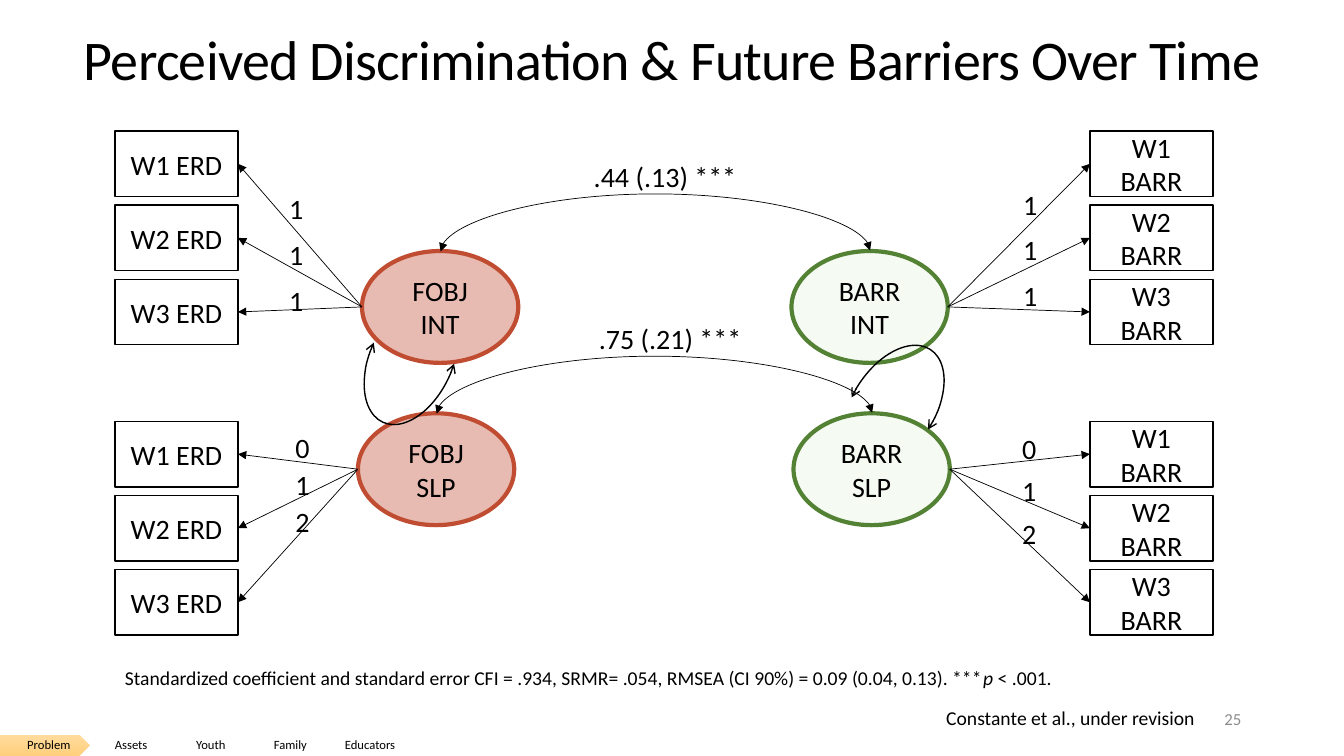
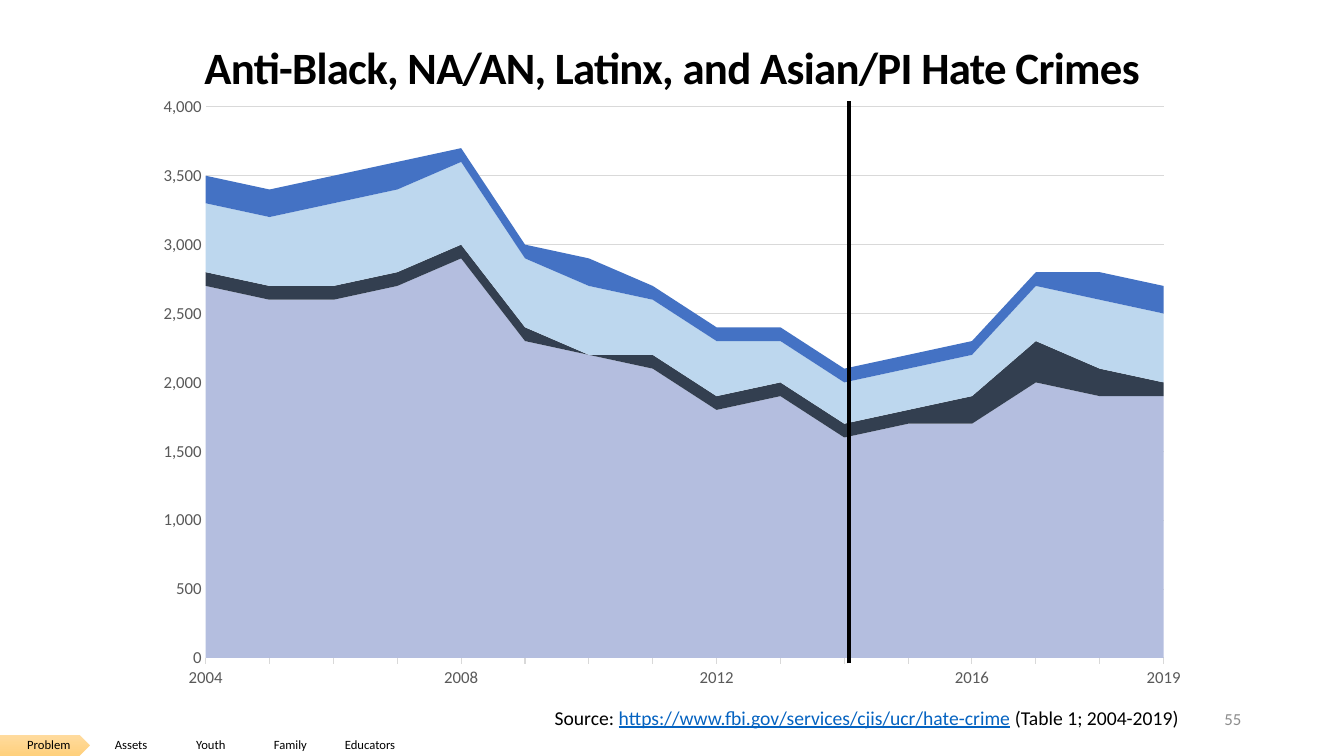
from dataclasses import dataclass

from lxml.etree import SubElement
from pptx import Presentation
from pptx.chart.data import CategoryChartData
from pptx.dml.color import RGBColor
from pptx.enum.chart import XL_CHART_TYPE as ChartType, XL_TICK_MARK as TickMark
from pptx.enum.shapes import MSO_CONNECTOR as Connector, MSO_SHAPE as Shape
from pptx.enum.text import MSO_ANCHOR as Anchor, PP_ALIGN as Align
from pptx.oxml.ns import qn
from pptx.util import Inches, Pt


@dataclass(frozen=True)
class Theme:
    font: str = "Calibri"
    black: str = "000000"
    white: str = "FFFFFF"
    page_grey: str = "8C8C8C"
    axis_grey: str = "595959"
    grid_grey: str = "D9D9D9"
    link: str = "0563C1"
    tab_top: str = "FFDB9E"
    tab_bottom: str = "FFD07C"
    diagram_size: int = 20
    note_size: int = 14
    axis_size: int = 12
    page_size: int = 12
    tab_size: int = 9


THEME = Theme()

# Content: shared navigation
SECTIONS = ["Problem", "Assets", "Youth", "Family", "Educators"]
TAB_WIDTH, TAB_STEP, TAB_HEIGHT, TAB_TOP = 0.99, 0.79, 0.21, 7.29

# Content: path diagram
DIAGRAM_TITLE = "Perceived Discrimination & Future Barriers Over Time"
FIT_NOTE = [
    ("Standardized coefficient and standard error CFI = .934, SRMR= .054, "
     "RMSEA (CI 90%) = 0.09 (0.04, 0.13). ***", {}),
    ("p ", {"italic": True}),
    ("< .001.", {}),
]
CITATION = [("Constante et al., under revision", {})]
BOX_WIDTH, BOX_HEIGHT, BOX_STEP = 1.22, 0.65, 0.735
OVAL_WIDTH, OVAL_HEIGHT = 1.55, 1.11
SCALES = {  # box left, fill, fill opacity in percent, outline
    "ERD": (1.14, "C04D32", 38, "C04D32"),
    "BARR": (10.81, "E2F0D9", 33, "548235"),
}
FACTORS = [  # scale, oval lines, oval position, first box top, loadings, label left, top, step
    ("ERD", ["FOBJ", "INT"], (3.59, 2.49), 1.3, "111", 2.77, 1.85, 0.455),
    ("ERD", ["FOBJ", "SLP"], (3.55, 4.1), 4.18, "012", 2.83, 4.22, 0.37),
    ("BARR", ["BARR", "INT"], (7.85, 2.49), 1.3, "111", 10.05, 1.81, 0.45),
    ("BARR", ["BARR", "SLP"], (7.87, 4.1), 4.18, "012", 10.04, 4.23, 0.42),
]
CORRELATIONS = [  # text, text position, curve left, right, foot, rise
    (".44 (.13) ***", (5.79, 1.53), 4.37, 8.63, 2.49, 0.58),
    (".75 (.21) ***", (5.84, 3.14), 4.33, 8.65, 4.1, 0.58),
]
ARCS = [((8.45, 3.36), 32.6), ((3.67, 2.89), 204.6)]  # position, rotation

# Content: hate crime chart
CHART_TITLE = "Anti-Black, NA/AN, Latinx, and Asian/PI Hate Crimes"
SOURCE = [
    ("Source: ", {}),
    ("https://www.fbi.gov/services/cjis/ucr/hate-crime", {"underline": True, "color": THEME.link}),
    (" (Table 1; 2004-2019)", {}),
]
LABELLED_YEARS = {2004, 2008, 2012, 2016, 2019}
SERIES = [
    ("Series 1", "B4BEDF", [2700, 2600, 2600, 2700, 2900, 2300, 2200, 2100,
                            1800, 1900, 1600, 1700, 1700, 2000, 1900, 1900]),
    ("Series 2", "333F50", [100, 100, 100, 100, 100, 100, 0, 100,
                            100, 100, 100, 100, 200, 300, 200, 100]),
    ("Series 3", "BDD7EE", [500, 500, 600, 600, 600, 500, 500, 400,
                            400, 300, 300, 300, 300, 400, 500, 500]),
    ("Series 4", "4472C4", [200, 200, 200, 200, 100, 100, 200, 100,
                            100, 100, 100, 100, 100, 100, 200, 200]),
]
PLOT_LAYOUT = {"x": 0.06, "y": 0.036, "w": 0.904, "h": 0.895}


def rgb(value):
    return RGBColor.from_string(value)


def style_font(font, size, color=THEME.black):
    font.name, font.size = THEME.font, Pt(size)
    font.color.rgb = rgb(color)


def style_line(line, color, width):
    line.color.rgb = rgb(color)
    line.width = Pt(width)


def write_lines(shape, lines, size, align=Align.CENTER):
    frame = shape.text_frame
    frame.word_wrap = True
    frame.vertical_anchor = Anchor.MIDDLE
    frame.text = "\n".join(lines)
    for paragraph in frame.paragraphs:
        paragraph.alignment = align
        style_font(paragraph.font, size)


def add_text(slide, box, runs, size, align=Align.LEFT, color=THEME.black, anchor=Anchor.TOP):
    frame = slide.shapes.add_textbox(*map(Inches, box)).text_frame
    frame.word_wrap = True
    frame.vertical_anchor = anchor
    paragraph = frame.paragraphs[0]
    paragraph.alignment = align
    style_font(paragraph.font, size, color)
    for text, style in runs:
        run = paragraph.add_run()
        run.text = text
        run.font.italic = style.get("italic")
        run.font.underline = style.get("underline")
        if "color" in style:
            run.font.color.rgb = rgb(style["color"])


def add_preset(slide, preset, box, fill=None):
    shape = slide.shapes.add_shape(preset, *map(Inches, box))
    shape.shadow.inherit = False
    shape.line.fill.background()
    if fill:
        shape.fill.solid()
        shape.fill.fore_color.rgb = rgb(fill)
    else:
        shape.fill.background()
    return shape


def add_line(slide, kind, start, end, width):
    connector = slide.shapes.add_connector(kind, *map(Inches, (*start, *end)))
    style_line(connector.line, THEME.black, width)
    SubElement(connector.element.spPr, qn("a:effectLst"))
    return connector


def add_arrowheads(shape, kind, ends):
    outline = shape.element.spPr.find(qn("a:ln"))
    for end in ends:
        SubElement(outline, qn(f"a:{end}"), type=kind)


def add_base(presentation, title, top, size, bold, page, source, source_right):
    slide = presentation.slides.add_slide(presentation.slide_layouts[5])
    # Title
    placeholder = slide.shapes.title
    placeholder.left, placeholder.top = Inches(0), Inches(top)
    placeholder.width, placeholder.height = Inches(13.33), Inches(0.71)
    write_lines(placeholder, [title], size)
    placeholder.text_frame.vertical_anchor = Anchor.TOP
    paragraph = placeholder.text_frame.paragraphs[0]
    paragraph.font.bold = bold
    paragraph.line_spacing = 0.85 if bold else 1.0
    paragraph.runs[0].font.bold = bold
    paragraph.runs[0].font._element.set("spc", "-50")
    # Source and page number
    add_text(slide, (source_right - 8.23, 6.95, 8.23, 0.34), source, THEME.note_size, Align.RIGHT)
    add_text(slide, (11.63, 6.95, 0.78, 0.36), [(page, {})], THEME.page_size,
             Align.RIGHT, THEME.page_grey, Anchor.MIDDLE)
    return slide


def add_navigation(slide):
    for index, name in enumerate(SECTIONS):
        preset = Shape.CHEVRON if index else Shape.PENTAGON
        box = (index * TAB_STEP, TAB_TOP, TAB_WIDTH, TAB_HEIGHT)
        tab = add_preset(slide, preset, box, THEME.white)
        if index == 0:
            tab.fill.gradient()
            tab.fill.gradient_angle = 270
            for stop, color in zip(tab.fill.gradient_stops, (THEME.tab_top, THEME.tab_bottom)):
                stop.color.rgb = rgb(color)
        write_lines(tab, [name], THEME.tab_size)
        frame = tab.text_frame
        frame.margin_left, frame.margin_right = Inches(0.04), Inches(0.01)
        frame.margin_top = frame.margin_bottom = Inches(0.03)
        frame.paragraphs[0].line_spacing = 0.9


def add_factor(slide, scale, lines, position, first_top, loadings, label_left, label_top, label_step):
    box_left, fill, opacity, outline = SCALES[scale]
    oval_left, oval_top = position
    oval = add_preset(slide, Shape.OVAL, (*position, OVAL_WIDTH, OVAL_HEIGHT), fill)
    color = oval.element.spPr.find(qn("a:solidFill"))[0]
    SubElement(color, qn("a:alpha"), val=str(opacity * 1000))
    style_line(oval.line, outline, 3)
    write_lines(oval, lines, THEME.diagram_size)

    boxes_on_left = box_left < oval_left
    start = (oval_left + (0 if boxes_on_left else OVAL_WIDTH), oval_top + OVAL_HEIGHT / 2)
    tip_left = box_left + (BOX_WIDTH if boxes_on_left else 0)
    for row, loading in enumerate(loadings):
        top = first_top + row * BOX_STEP
        box = add_preset(slide, Shape.RECTANGLE, (box_left, top, BOX_WIDTH, BOX_HEIGHT), THEME.white)
        style_line(box.line, THEME.black, 1)
        write_lines(box, [f"W{row + 1} {scale}"], THEME.diagram_size)
        arrow = add_line(slide, Connector.STRAIGHT, start, (tip_left, top + BOX_HEIGHT / 2), 0.5)
        add_arrowheads(arrow, "triangle", ["tailEnd"])
        add_text(slide, (label_left, label_top + row * label_step, 0.29, 0.45),
                 [(loading, {})], THEME.diagram_size)


def add_correlation(slide, text, position, left, right, foot, rise):
    add_text(slide, (*position, 1.85, 0.44), [(text, {})], THEME.diagram_size)
    # A thin upright curve, turned a quarter so that it arches over the ovals
    thickness, span, middle = 0.01, right - left, (left + right) / 2
    curve = add_line(slide, Connector.CURVE, (middle - thickness / 2, foot - span / 2),
                     (middle + thickness / 2, foot + span / 2), 0.5)
    properties = curve.element.spPr
    for name, value in (("rot", "5400000"), ("flipH", "1"), ("flipV", "1")):
        properties.find(qn("a:xfrm")).set(name, value)
    guides = properties.find(qn("a:prstGeom")).find(qn("a:avLst"))
    SubElement(guides, qn("a:gd"), name="adj1", fmla=f"val {round(rise / thickness * 100000)}")
    add_arrowheads(curve, "triangle", ["headEnd", "tailEnd"])


def build_diagram(presentation):
    slide = add_base(presentation, DIAGRAM_TITLE, 0.19, 40, False, "25", CITATION, 11.95)
    add_text(slide, (1.14, 6.56, 11.59, 0.34), FIT_NOTE, THEME.note_size)
    for factor in FACTORS:
        add_factor(slide, *factor)
    for correlation in CORRELATIONS:
        add_correlation(slide, *correlation)
    for position, rotation in ARCS:
        arc = add_preset(slide, Shape.ARC, (*position, 0.82, 1.36))
        arc.rotation = rotation
        arc.adjustments[0] = 96.32
        style_line(arc.line, THEME.black, 1)
        add_arrowheads(arc, "arrow", ["headEnd", "tailEnd"])
    add_navigation(slide)


def add_hate_crime_chart(slide):
    data = CategoryChartData(number_format="#,##0")
    data.categories = [str(year) if year in LABELLED_YEARS else "" for year in range(2004, 2020)]
    for name, _, values in SERIES:
        data.add_series(name, values)
    box = map(Inches, (1.41, 0.84, 10.51, 6.11))
    chart = slide.shapes.add_chart(ChartType.AREA_STACKED, *box, data).chart
    chart.has_legend = chart.has_title = False
    style_font(chart.font, 10)
    chart.plots[0].vary_by_categories = False
    for series, (_, color, _) in zip(chart.plots[0].series, SERIES):
        series.format.fill.solid()
        series.format.fill.fore_color.rgb = rgb(color)

    # Axes
    years, counts = chart.category_axis, chart.value_axis
    for axis in (years, counts):
        style_font(axis.tick_labels.font, THEME.axis_size, THEME.axis_grey)
        axis.minor_tick_mark = TickMark.NONE
    years.major_tick_mark = TickMark.OUTSIDE
    years.has_major_gridlines = False
    style_line(years.format.line, THEME.grid_grey, 0.75)
    counts.major_tick_mark = TickMark.NONE
    counts.minimum_scale, counts.maximum_scale, counts.major_unit = 0, 4000, 500
    counts.format.line.fill.background()
    style_line(counts.major_gridlines.format.line, THEME.grid_grey, 0.75)
    counts.tick_labels.number_format = "#,##0"
    counts.tick_labels.number_format_is_linked = False
    counts._element.find(qn("c:crossBetween")).set("val", "midCat")

    # Fixed inner plot area
    plot_area = chart._chartSpace.chart.plotArea
    layout = plot_area.find(qn("c:layout"))
    if layout is None:
        layout = SubElement(plot_area, qn("c:layout"))
        plot_area.insert(0, layout)
    manual = SubElement(layout, qn("c:manualLayout"))
    SubElement(manual, qn("c:layoutTarget"), val="inner")
    for side in "xy":
        SubElement(manual, qn(f"c:{side}Mode"), val="edge")
    for side, share in PLOT_LAYOUT.items():
        SubElement(manual, qn(f"c:{side}"), val=str(share))


def build_chart(presentation):
    slide = add_base(presentation, CHART_TITLE, 0.43, 32, True, "55", SOURCE, 11.79)
    add_hate_crime_chart(slide)
    add_line(slide, Connector.STRAIGHT, (8.42, 6.58), (8.42, 1), 2.5)
    add_navigation(slide)


def main():
    presentation = Presentation()
    presentation.slide_width, presentation.slide_height = Inches(13.33), Inches(7.5)
    build_diagram(presentation)
    build_chart(presentation)
    presentation.save("out.pptx")


if __name__ == "__main__":
    main()
